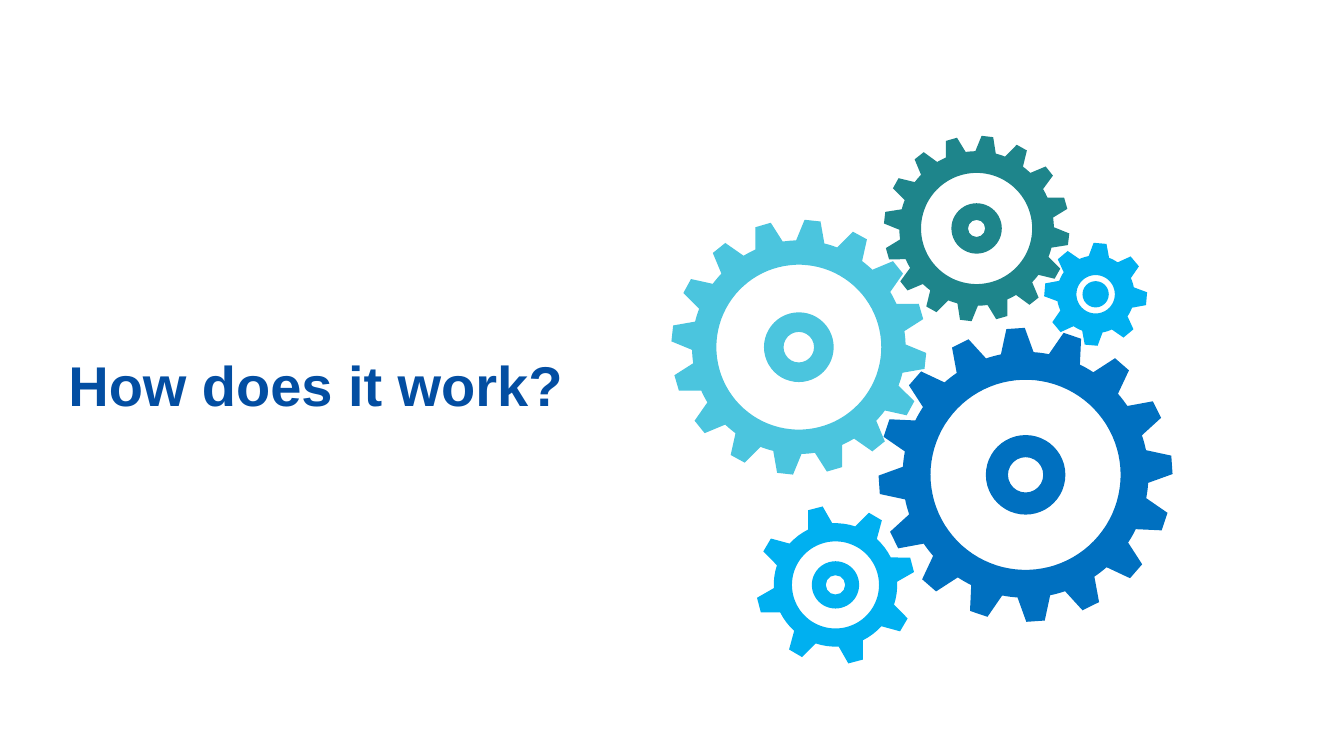
from collections import namedtuple
from math import cos, radians, sin

from pptx import Presentation
from pptx.dml.color import RGBColor
from pptx.enum.shapes import MSO_SHAPE as SHAPE
from pptx.enum.text import MSO_ANCHOR as ANCHOR
from pptx.util import Pt

COLORS = {"title": "034EA2", "sky": "00B0F0", "aqua": "4BC5DE",
          "blue": "0070C0", "teal": "1E858B"}

TITLE = "How does it work?"
TITLE_BOX = (41.8, 236.9, 828, 61.9)
TITLE_FONT = {"name": "Arial", "size": Pt(40), "bold": True}
TITLE_FRAME = {"word_wrap": True, "vertical_anchor": ANCHOR.BOTTOM,
               "margin_left": Pt(7.2), "margin_right": Pt(7.2),
               "margin_top": Pt(3.6), "margin_bottom": Pt(0)}

# Radii in points, phase in degrees; tip_half and root_half are shares of the tooth pitch.
Gear = namedtuple("Gear", "color cx cy teeth phase tip root hole hub bore tip_half root_half")
GEARS = [
    Gear("sky", 782.6, 210.2, 8, 5, 36.8, 27.7, 13.7, 9.4, 0, 0.16, 0.34),
    Gear("aqua", 570.6, 248, 16, 6.2, 91.1, 76.3, 58.9, 24.9, 10.9, 0.16, 0.34),
    Gear("blue", 732.6, 339.2, 16, -3.9, 105, 87.8, 67.9, 28.4, 12.6, 0.16, 0.34),
    Gear("teal", 697.6, 163.2, 16, 6.7, 66.3, 55.2, 39.7, 18, 6.1, 0.16, 0.34),
    Gear("sky", 596.8, 417.8, 8, -14.7, 56.8, 44.1, 31.1, 16.9, 6.9, 0.12, 0.26),
]
HOLE_STEP = 4  # degrees between points of the round hole
GAP_PARTS = 4  # straight parts along the rim between two teeth


def rgb(name):
    return RGBColor.from_string(COLORS[name])


def paint(sp, color):
    sp.shadow.inherit = False
    sp.fill.solid()
    sp.fill.fore_color.rgb = rgb(color)
    sp.line.fill.background()


def polar(gear, radius, degrees):
    a = radians(degrees)
    return Pt(gear.cx + radius * cos(a)), Pt(gear.cy + radius * sin(a))


def rim_points(gear):
    """Outline of the toothed rim, tooth by tooth, with the curved gap after each tooth."""
    pitch = 360 / gear.teeth
    tip, root = gear.tip_half * pitch, gear.root_half * pitch
    gap = pitch - 2 * root
    points = []
    for i in range(gear.teeth):
        mid = gear.phase + i * pitch
        points += [polar(gear, gear.tip, mid - tip), polar(gear, gear.tip, mid + tip)]
        points += [polar(gear, gear.root, mid + root + gap * k / GAP_PARTS)
                   for k in range(GAP_PARTS + 1)]
    return points


def add_gear(shapes, gear):
    group = shapes.add_group_shape().shapes
    rim = rim_points(gear)
    hole = [polar(gear, gear.hole, -a) for a in range(0, 360, HOLE_STEP)]
    builder = group.build_freeform(*rim[0])
    builder.add_line_segments(rim[1:])
    builder.move_to(*hole[0])
    builder.add_line_segments(hole[1:])
    paint(builder.convert_to_shape(), gear.color)

    kind = SHAPE.DONUT if gear.bore else SHAPE.OVAL
    hub = group.add_shape(kind, Pt(gear.cx - gear.hub), Pt(gear.cy - gear.hub),
                          Pt(2 * gear.hub), Pt(2 * gear.hub))
    if gear.bore:
        hub.adjustments[0] = (gear.hub - gear.bore) / (2 * gear.hub)
    paint(hub, gear.color)


def add_title(shapes):
    tf = shapes.add_textbox(*map(Pt, TITLE_BOX)).text_frame
    for name, value in TITLE_FRAME.items():
        setattr(tf, name, value)
    p = tf.paragraphs[0]
    p.line_spacing = 0.9
    r = p.add_run()
    r.text = TITLE
    for name, value in TITLE_FONT.items():
        setattr(r.font, name, value)
    r.font.color.rgb = rgb("title")


def main():
    prs = Presentation()
    prs.slide_width, prs.slide_height = Pt(960), Pt(540)
    s = prs.slides.add_slide(prs.slide_layouts[6])
    add_title(s.shapes)
    for gear in GEARS:
        add_gear(s.shapes, gear)
    prs.save("out.pptx")


if __name__ == "__main__":
    main()
